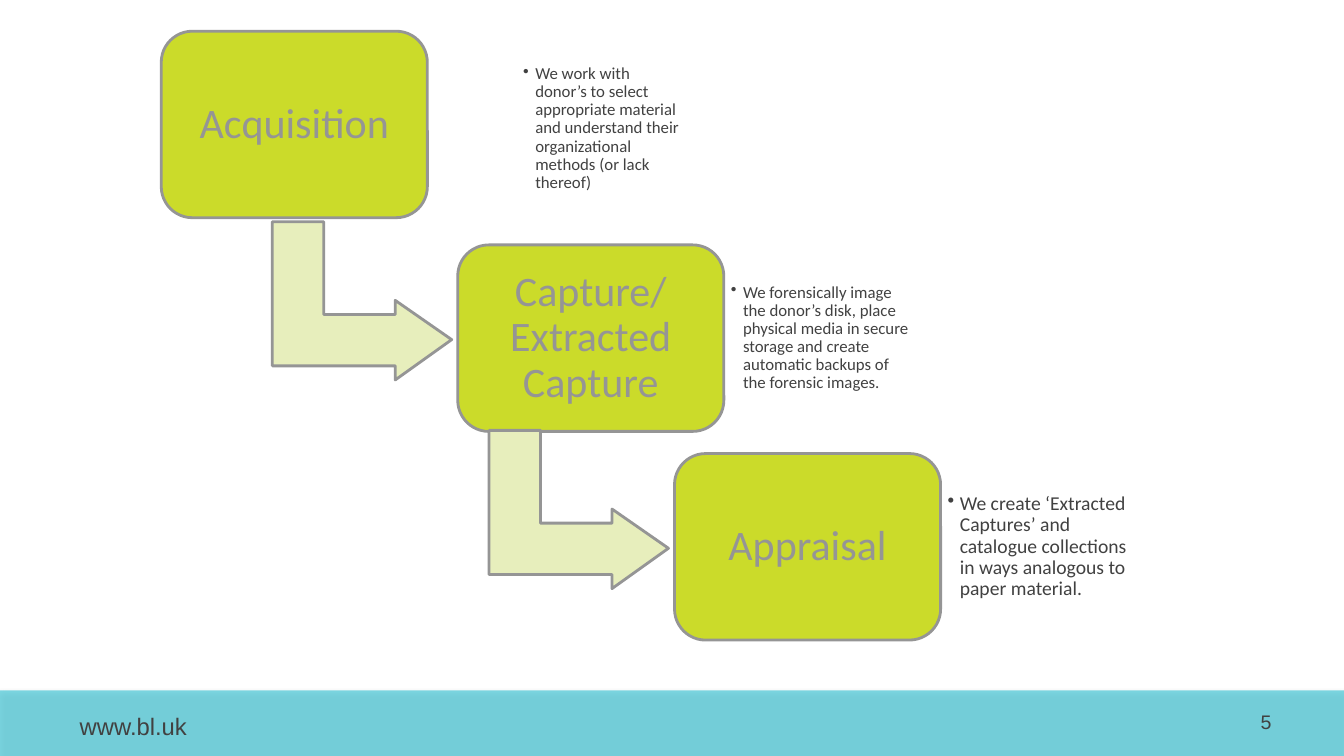
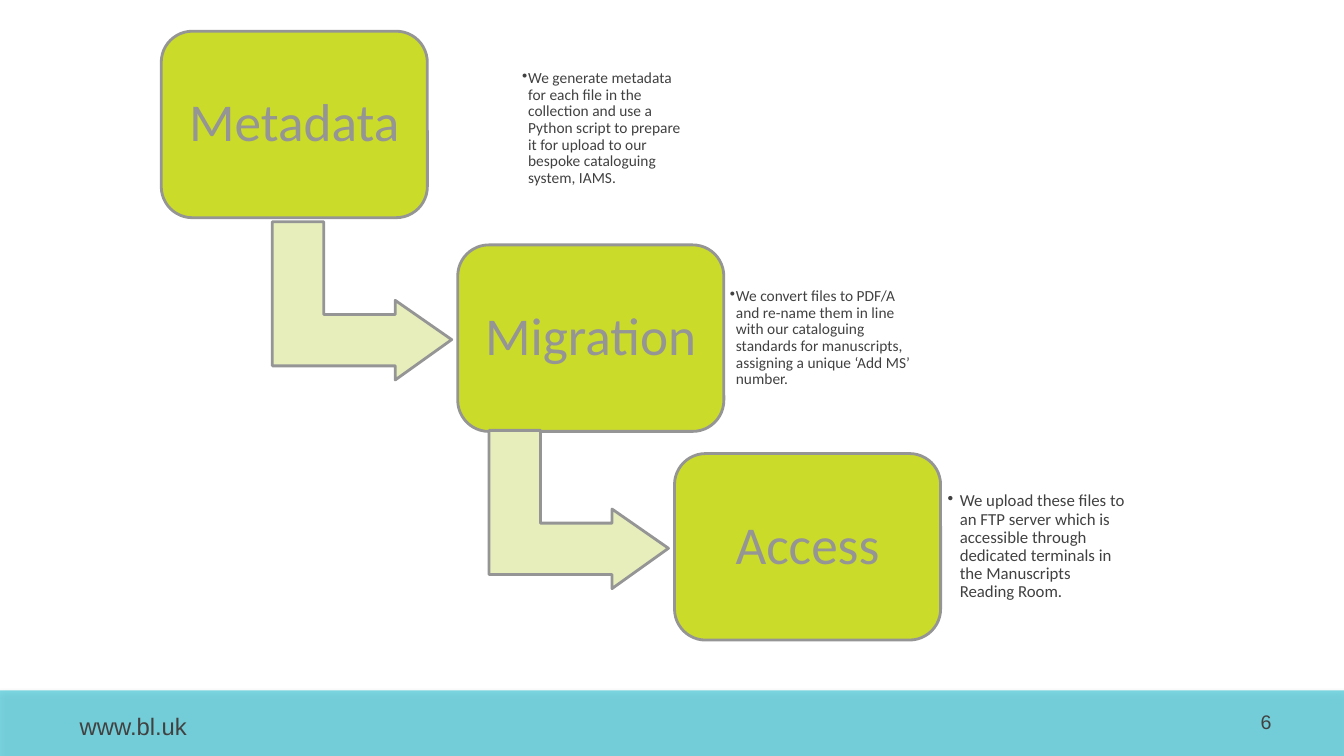
from lxml import etree
from pptx import Presentation
from pptx import util as u
from pptx.dml.color import RGBColor
from pptx.enum import shapes, text
from pptx.oxml import ns

COLOURS = {"band": "00B3C9", "ink": "414141", "box": "CBDB2A",
           "arrow": "E7EEBC", "edge": "959595", "shadow": "808080"}

prs = Presentation()
prs.slide_width, prs.slide_height = u.Inches(13.33), u.Inches(7.5)
COL, ROW = prs.slide_width / 100, prs.slide_height / 100  # 100 x 100 grid

# Stages step down the slide: left column, top row, note gap, note drop, note width
STAGES = [(12, 4.13, 6.6, 0.53, 13.13),
          (34.06, 32.4, 0, 0, 14.4),
          (50.19, 60, 0, 0, 14.4)]
STAGE_W, STAGE_H = 19.8, 24.67

# Elbow arrow, measured from its top left corner, which sits off the next stage
ELBOW = [(0, 0), (3.83, 0), (3.83, 12.27), (9.15, 12.27), (9.15, 10.4),
         (13.35, 15.6), (9.15, 20.93), (9.15, 19.07), (0, 19.07)]
ELBOW_LEFT, ELBOW_TOP = 13.8, 3.07

# Each stage: name, note, note size, note indent, note margin (inches)
SLIDES = [
    {"number": "5", "name_size": 30, "name_margin": 0.12, "stages": [
        ("Acquisition", "We work with donor’s to select appropriate material and understand "
         "their organizational methods (or lack thereof)", 12, 0.12, 0.07),
        ("Capture/ Extracted Capture", "We forensically image the donor’s disk, place physical "
         "media in secure storage and create automatic backups of the forensic images.",
         12, 0.12, 0.07),
        ("Appraisal", "We create ‘Extracted Captures’ and catalogue collections in ways "
         "analogous to paper material.", 14, 0.12, 0.07)]},
    {"number": "6", "name_size": 38, "name_margin": 0.16, "stages": [
        ("Metadata", "We generate metadata for each file in the collection and use a Python "
         "script to prepare it for upload to our bespoke cataloguing system, IAMS.",
         11, 0.06, 0.06),
        ("Migration", "We convert files to PDF/A and re-name them in line with our cataloguing "
         "standards for manuscripts, assigning a unique ‘Add MS’ number.", 11, 0.06, 0.06),
        ("Access", "We upload these files to an FTP server which is accessible through "
         "dedicated terminals in the Manuscripts Reading Room.", 12, 0.12, 0.07)]},
]


def paint(shape, fill, edge=None):
    shape.shadow.inherit = False
    shape.fill.solid()
    shape.fill.fore_color.rgb = RGBColor.from_string(COLOURS[fill])
    if edge:
        shape.line.color.rgb = RGBColor.from_string(COLOURS[edge])
        shape.line.width = u.Pt(2)
    else:
        shape.line.fill.background()


def write(shape, words, size, font, colour, margin, align="LEFT", anchor="MIDDLE",
          wrap=True, spacing=1.0, indent=None):
    frame = shape.text_frame
    frame.word_wrap = wrap
    frame.vertical_anchor = text.MSO_ANCHOR[anchor]
    frame.margin_left = frame.margin_right = u.Inches(margin)
    frame.margin_top = frame.margin_bottom = u.Inches(margin)
    para = frame.paragraphs[0]
    para.alignment = text.PP_ALIGN[align]
    para.line_spacing = spacing
    if indent:
        props = para._p.get_or_add_pPr()
        props.set("marL", str(u.Inches(indent)))
        props.set("indent", str(-u.Inches(indent)))
        etree.SubElement(props, ns.qn("a:buChar")).set("char", "•")
    run = para.add_run()
    run.text = words
    run.font.size = u.Pt(size)
    run.font.name = font
    run.font.color.rgb = RGBColor.from_string(COLOURS[colour])


for content in SLIDES:
    slide = prs.slides.add_slide(prs.slide_layouts[6])
    canvas = slide.shapes

    # Footer band: half transparent, with a soft shadow
    band = canvas.add_shape(shapes.MSO_SHAPE.RECTANGLE, 0, int(91.33 * ROW),
                            prs.slide_width, int(8.67 * ROW))
    paint(band, "band")
    band_colour = band._element.spPr.find(".//" + ns.qn("a:srgbClr"))
    etree.SubElement(band_colour, ns.qn("a:alpha")).set("val", "50000")
    effects = band._element.spPr.find(ns.qn("a:effectLst"))
    glow = etree.SubElement(effects, ns.qn("a:outerShdw"), blurRad=str(u.Pt(3)),
                            dist=str(u.Pt(1.8)), dir="5400000", rotWithShape="0")
    shade = etree.SubElement(glow, ns.qn("a:srgbClr"), val=COLOURS["shadow"])
    etree.SubElement(shade, ns.qn("a:alpha"), val="35000")

    # Web address and slide number
    address = canvas.add_textbox(int(5.48 * COL), int(93.33 * ROW),
                                 int(22.43 * COL), int(5.2 * ROW))
    write(address, "www.bl.uk", 17, "Arial", "ink", 0.06, anchor="TOP")
    number = canvas.add_textbox(int(93.25 * COL), int(93.2 * ROW),
                                int(1.8 * COL), int(4.4 * ROW))
    write(number, content["number"], 14, "Arial", "ink", 0.06, align="RIGHT", wrap=False)

    # Stages, each after the first with the arrow that leads to it
    for step, (place, stage) in enumerate(zip(STAGES, content["stages"])):
        left, top, note_gap, note_drop, note_w = place
        name, note, note_size, indent, margin = stage
        if step:
            corners = [(int((left - ELBOW_LEFT + x) * COL), int((top - ELBOW_TOP + y) * ROW))
                       for x, y in ELBOW]
            outline = canvas.build_freeform(*corners[0])
            outline.add_line_segments(corners[1:], close=True)
            paint(outline.convert_to_shape(), "arrow", "edge")

        box = canvas.add_shape(shapes.MSO_SHAPE.ROUNDED_RECTANGLE, int(left * COL),
                               int(top * ROW), int(STAGE_W * COL), int(STAGE_H * ROW))
        paint(box, "box", "edge")
        write(box, name, content["name_size"], "Calibri", "edge", content["name_margin"],
              align="CENTER", spacing=0.9)

        detail = canvas.add_textbox(int((left + STAGE_W + note_gap) * COL),
                                    int((top + note_drop) * ROW),
                                    int(note_w * COL), int(STAGE_H * ROW))
        write(detail, note, note_size, "Calibri", "ink", margin, spacing=0.9, indent=indent)

prs.save("out.pptx")
